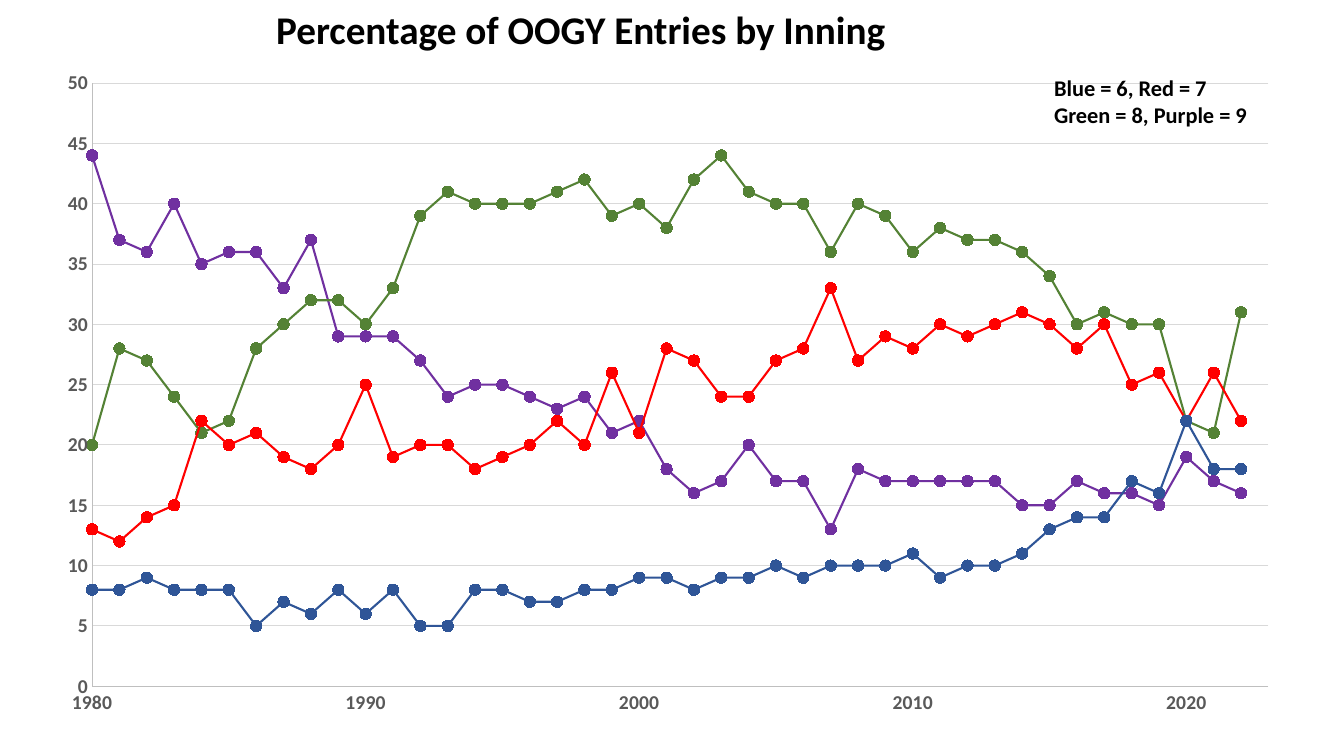
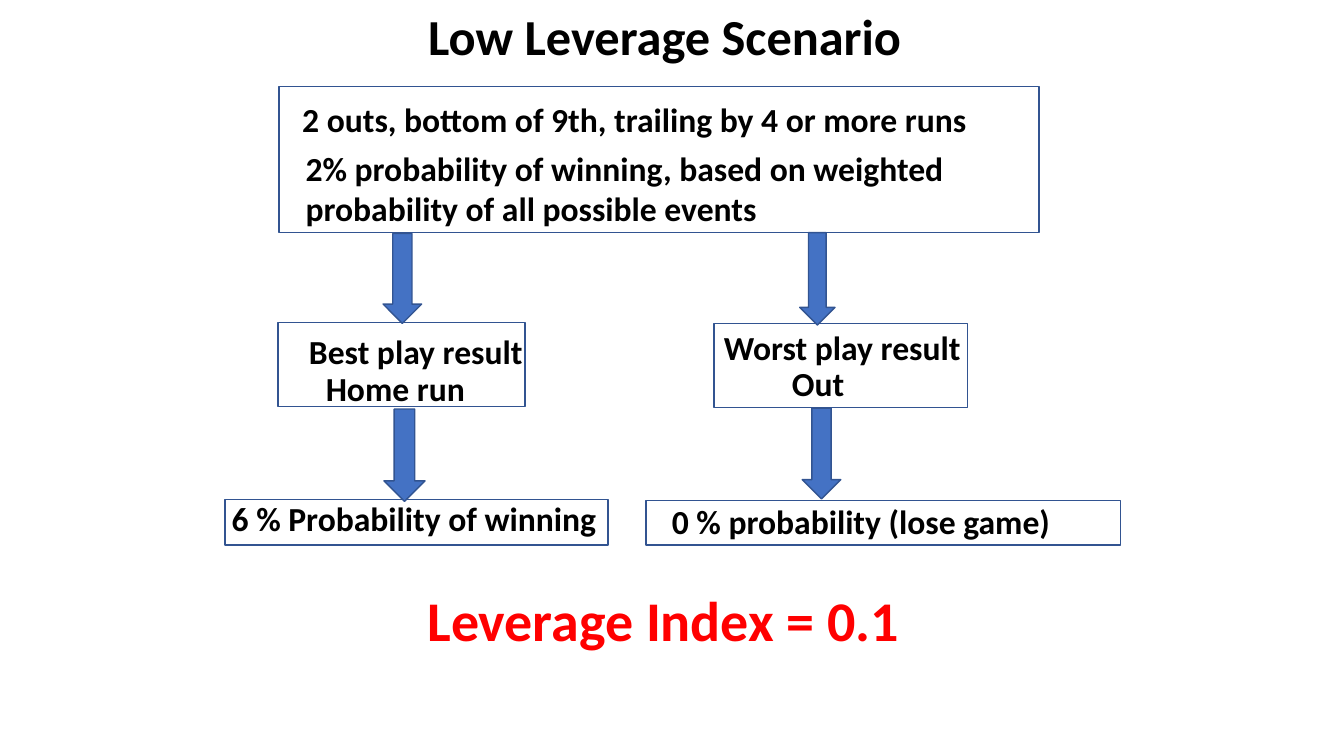
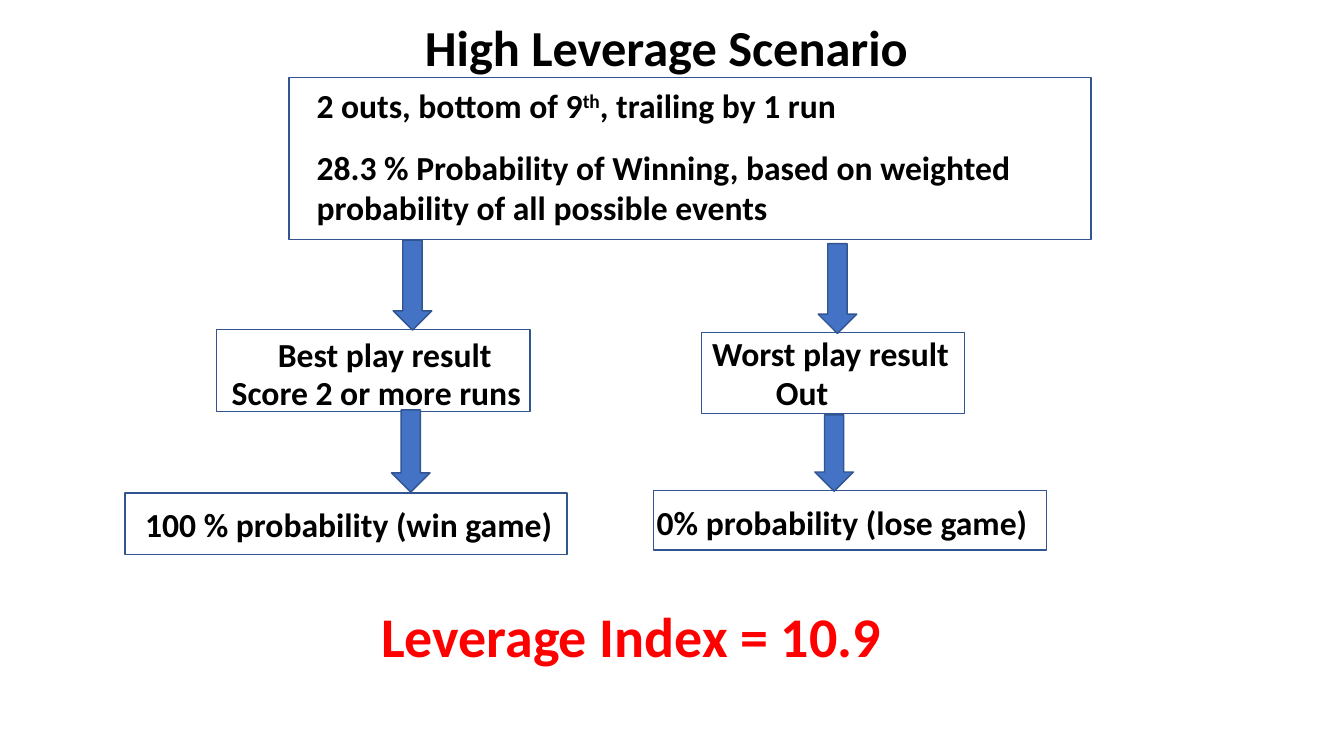
"""Builds three slides on relief pitching: one scatter chart and two leverage scenarios."""
from lxml.etree import SubElement
from pptx import Presentation
from pptx.chart.data import XyChartData
from pptx.dml.color import RGBColor
from pptx.enum.chart import XL_CHART_TYPE, XL_MARKER_STYLE, XL_TICK_MARK
from pptx.enum.shapes import MSO_SHAPE
from pptx.enum.text import MSO_AUTO_SIZE
from pptx.oxml.ns import qn
from pptx.util import Inches, Pt

COLUMNS, ROWS = 160, 90
BLACK, RED, BLUE, OUTLINE = "000000", "FF0000", "4472C4", "325491"
AXIS_TEXT, AXIS_LINE, GRID_LINE = "595959", "BFBFBF", "D9D9D9"

YEARS = range(1980, 2023)
INNINGS = [
    ("2F5597", "2F5597", [
        8, 8, 9, 8, 8, 8, 5, 7, 6, 8, 6, 8, 5, 5, 8, 8, 7, 7, 8, 8, 9, 9, 8, 9, 9, 10, 9, 10, 10,
        10, 11, 9, 10, 10, 11, 13, 14, 14, 17, 16, 22, 18, 18]),
    (RED, RED, [
        13, 12, 14, 15, 22, 20, 21, 19, 18, 20, 25, 19, 20, 20, 18, 19, 20, 22, 20, 26, 21, 28,
        27, 24, 24, 27, 28, 33, 27, 29, 28, 30, 29, 30, 31, 30, 28, 30, 25, 26, 22, 26, 22]),
    ("548235", "385723", [
        20, 28, 27, 24, 21, 22, 28, 30, 32, 32, 30, 33, 39, 41, 40, 40, 40, 41, 42, 39, 40, 38,
        42, 44, 41, 40, 40, 36, 40, 39, 36, 38, 37, 37, 36, 34, 30, 31, 30, 30, 22, 21, 31]),
    ("7030A0", "7030A0", [
        44, 37, 36, 40, 35, 36, 36, 33, 37, 29, 29, 29, 27, 24, 25, 25, 24, 23, 24, 21, 22, 18,
        16, 17, 20, 17, 17, 13, 18, 17, 17, 17, 17, 17, 15, 15, 17, 16, 16, 15, 19, 17, 16]),
]

LOW_LEVERAGE = {
    "title": (49.8, 0, 68.4, "Low Leverage Scenario"),
    "index": (49.7, 69.1, 60, "Leverage Index = 0.1"),
    "labels": [
        (34.8, 11.2, 85.1, "2 outs, bottom of 9th, trailing by 4 or more runs"),
        (37.6, 43.2, 26.8, "Home run"),
        (93.1, 42.6, 25.4, "Out"),
        (26.4, 58.7, 51.5, "6 % Probability of winning"),
        (78.8, 59, 48.6, "0 % probability (lose game)"),
        (35.6, 38.8, 31.4, "Best play result"),
        (85, 38.3, 31.9, "Worst play result"),
    ],
    "odds": (35.2, 17, 80.4,
             "2% probability of winning, based on weighted probability of all possible events"),
    "boxes": [(33.2, 10.3, 90.5, 17.4), (33.1, 38.4, 29.4, 10), (85, 38.5, 30.2, 10),
              (26.8, 59.5, 45.6, 5.4), (76.9, 59.6, 56.5, 5.3)],
    "arrows": [(45.6, 27.8, 4.6, 10.7), (95.2, 27.7, 4.2, 11),
               (45.7, 48.7, 4.9, 11), (95.5, 48.6, 4.6, 10.8)],
}

HIGH_LEVERAGE = {
    "title": (49.4, 1.3, 65.2, "High Leverage Scenario"),
    "index": (44.2, 71, 67.8, "Leverage Index = 10.9"),
    "labels": [
        (36.5, 9.5, 65.2, "2 outs, bottom of 9^th^, trailing by 1 run"),
        (26.4, 43.7, 40.4, "Score 2 or more runs"),
        (91.2, 43.7, 10, "Out"),
        (16.1, 59.4, 52.4, "100 % probability (win game)"),
        (77, 59.2, 52.9, "0% probability (lose game)"),
        (31.9, 39.2, 53.8, "Best play result"),
        (83.6, 39, 32.9, "Worst play result"),
    ],
    "odds": (36.5, 16.9, 87.2,
             "28.3 % Probability of Winning, based on weighted probability of all possible events"),
    "boxes": [(34.4, 9.2, 95.5, 19.3), (25.8, 39.2, 37.3, 9.8), (83.5, 39.6, 31.3, 9.6),
              (14.9, 58.7, 52.6, 7.3), (77.8, 58.4, 46.8, 7.1)],
    "arrows": [(46.8, 28.6, 4.6, 10.7), (97.4, 29, 4.6, 10.7),
               (46.6, 48.8, 4.6, 9.8), (97, 49.4, 4.6, 9.1)],
}


def color(hex_code):
    """Turns a hex string into a colour."""
    return RGBColor.from_string(hex_code)


class Deck:
    """Holds the style and the current slide."""

    font = "Calibri"

    def __init__(self):
        """Starts an empty widescreen deck."""
        self.deck = Presentation()
        self.deck.slide_width, self.deck.slide_height = Inches(13.33), Inches(7.5)
        self.page = None

    def new_page(self):
        """Adds a blank slide and makes it current."""
        self.page = self.deck.slides.add_slide(self.deck.slide_layouts[6])

    def place(self, column, row, width, height):
        """Converts grid cells to slide lengths."""
        cell_width, cell_height = self.deck.slide_width / COLUMNS, self.deck.slide_height / ROWS
        return (round(column * cell_width), round(row * cell_height),
                round(width * cell_width), round(height * cell_height))

    def style(self, font, size, hex_code):
        """Applies the bold deck font."""
        font.name, font.size, font.bold = self.font, Pt(size), True
        font.color.rgb = color(hex_code)

    def text(self, column, row, width, *paragraphs, size=24, hex_code=BLACK, lines=1):
        """Adds a text box as tall as its lines; carets enclose superscripts."""
        height = lines * size * 0.2 + 1.2
        box = self.page.shapes.add_textbox(*self.place(column, row, width, height))
        frame = box.text_frame
        frame.word_wrap = True
        frame.auto_size = MSO_AUTO_SIZE.SHAPE_TO_FIT_TEXT
        for number, content in enumerate(paragraphs):
            para = frame.add_paragraph() if number else frame.paragraphs[0]
            self.style(para.font, size, hex_code)
            for position, part in enumerate(content.split("^")):
                span = para.add_run()
                span.text = part
                if position % 2:
                    span.font._element.set("baseline", "30000")

    def shape(self, kind, bounds, fill=None):
        """Adds an outlined shape, hollow unless a fill is given."""
        box = self.page.shapes.add_shape(kind, *self.place(*bounds))
        box.shadow.inherit = False
        box.line.color.rgb, box.line.width = color(OUTLINE), Pt(1)
        if fill:
            box.fill.solid()
            box.fill.fore_color.rgb = color(fill)
        else:
            box.fill.background()

    def axis(self, axis, low, high, step):
        """Scales and styles one chart axis."""
        axis.minimum_scale, axis.maximum_scale, axis.major_unit = low, high, step
        axis.major_tick_mark = axis.minor_tick_mark = XL_TICK_MARK.NONE
        axis.has_major_gridlines = False
        axis.tick_labels.number_format = "0"
        axis.tick_labels.number_format_is_linked = False
        axis.format.line.color.rgb, axis.format.line.width = color(AXIS_LINE), Pt(0.75)
        self.style(axis.tick_labels.font, 14, AXIS_TEXT)

    def scatter(self, bounds, plot_shares):
        """Adds the line scatter chart of all innings."""
        data = XyChartData()
        for number, (_, _, values) in enumerate(INNINGS, 1):
            series = data.add_series(f"Series {number}")
            for year, value in zip(YEARS, values):
                series.add_data_point(year, value)
        chart = self.page.shapes.add_chart(
            XL_CHART_TYPE.XY_SCATTER_LINES, *self.place(*bounds), data).chart
        chart.has_legend = chart.has_title = False
        chart.font.name, chart.font.size = self.font, Pt(10)
        chart.font.color.rgb = color(BLACK)
        chart.plots[0].vary_by_categories = False
        self.axis(chart.category_axis, 1980, 2023, 10)
        self.axis(chart.value_axis, 0, 50, 5)
        grid = chart.value_axis.major_gridlines.format.line
        grid.color.rgb, grid.width = color(GRID_LINE), Pt(0.75)
        for series, (line_color, marker_color, _) in zip(chart.plots[0].series, INNINGS):
            series.smooth = False
            line, marker = series.format.line, series.marker
            line.color.rgb, line.width = color(line_color), Pt(1.5)
            marker.style, marker.size = XL_MARKER_STYLE.CIRCLE, 8
            marker.format.fill.solid()
            marker.format.fill.fore_color.rgb = color(marker_color)
            marker.format.line.color.rgb = color(line_color)
        self.plot_area(chart, plot_shares)

    def plot_area(self, chart, shares):
        """Fixes the inner plot area as shares of the chart."""
        area = chart._chartSpace.find(f"{qn('c:chart')}/{qn('c:plotArea')}")
        for layout in area.findall(qn("c:layout")):
            area.remove(layout)
        layout = SubElement(area, qn("c:layout"))
        area.insert(0, layout)
        manual = SubElement(layout, qn("c:manualLayout"))
        settings = [("layoutTarget", "inner"), ("xMode", "edge"), ("yMode", "edge"),
                    *zip("xywh", shares)]
        for name, value in settings:
            SubElement(manual, qn(f"c:{name}")).set("val", str(value))

    def scenario(self, parts):
        """Draws one leverage scenario as a flow chart."""
        self.new_page()
        self.text(*parts["title"], size=36)
        for label in parts["labels"]:
            self.text(*label)
        self.text(*parts["odds"], lines=2)
        for bounds in parts["boxes"]:
            self.shape(MSO_SHAPE.FLOWCHART_PROCESS, bounds)
        for bounds in parts["arrows"]:
            self.shape(MSO_SHAPE.DOWN_ARROW, bounds, BLUE)
        self.text(*parts["index"], size=40, hex_code=RED)


def main():
    """Builds and saves the deck."""
    show = Deck()
    show.new_page()
    show.scatter((5, 6.7, 149, 79.8), (0.04, 0.04, 0.94, 0.9))
    show.text(124.3, 8.2, 26.8, "Blue = 6, Red = 7", "Green = 8, Purple = 9", size=16, lines=2)
    show.text(31.7, 0, 91.8, "Percentage of OOGY Entries by Inning", size=28)
    for parts in (LOW_LEVERAGE, HIGH_LEVERAGE):
        show.scenario(parts)
    show.deck.save("out.pptx")


if __name__ == "__main__":
    main()
